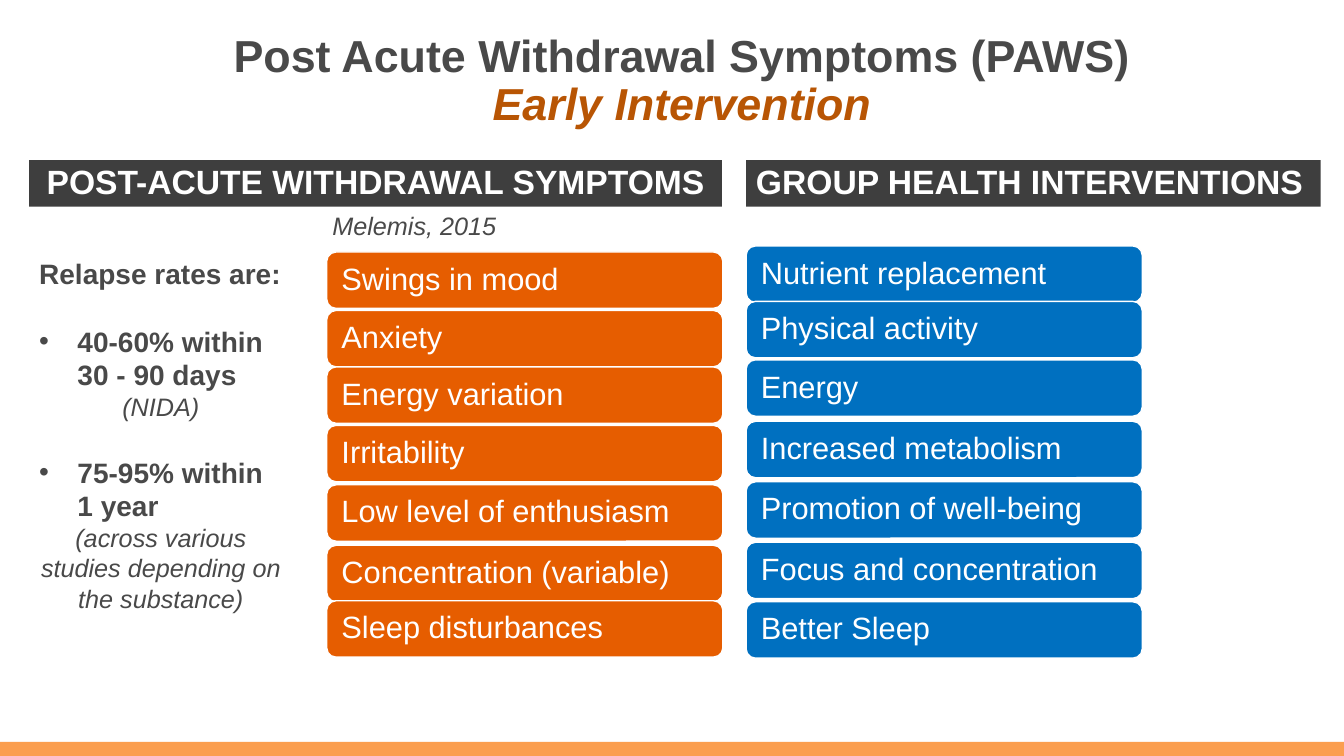
from dataclasses import dataclass

from lxml import etree
from pptx import Presentation
from pptx import util as u
from pptx.dml.color import RGBColor
from pptx.enum import shapes, text
from pptx.oxml.ns import qn


@dataclass(frozen=True)
class Theme:
    font: str = "Arial"
    ink: str = "494949"
    accent: str = "B85504"
    header: str = "3E3E3E"
    symptom: str = "E65D00"
    intervention: str = "0070C0"
    footer: str = "FB9E4F"
    white: str = "FFFFFF"
    title_size: int = 32
    header_size: int = 24
    pill_size: int = 22
    body_size: int = 20
    note_size: int = 18


class SlideBuilder:
    def __init__(self, slide, theme):
        self.slide = slide
        self.theme = theme

    def style(self, r, size, color, bold=False, italic=False):
        r.font.name = self.theme.font
        r.font.size = u.Pt(size)
        r.font.color.rgb = RGBColor.from_string(color)
        r.font.bold = bold
        r.font.italic = italic

    def title(self, heading, subtitle, *box):
        sp = self.slide.shapes.title
        sp.left, sp.top, sp.width, sp.height = map(u.Inches, box)
        tf = sp.text_frame
        tf.word_wrap = True
        tf.vertical_anchor = text.MSO_ANCHOR.MIDDLE
        p = tf.paragraphs[0]
        p.alignment = text.PP_ALIGN.CENTER
        p.line_spacing = 0.9
        for words, color, italic in ((heading, self.theme.ink, False),
                                     (subtitle, self.theme.accent, True)):
            r = p.add_run()
            r.text = words
            self.style(r, self.theme.title_size, color, True, italic)

    def block(self, kind, fill, *box):
        sp = self.slide.shapes.add_shape(kind, *map(u.Inches, box))
        sp.shadow.inherit = False
        sp.fill.solid()
        sp.fill.fore_color.rgb = RGBColor.from_string(fill)
        sp.line.fill.background()
        return sp

    def label(self, sp, words, size, align, bold=False):
        tf = sp.text_frame
        tf.word_wrap = True
        tf.vertical_anchor = text.MSO_ANCHOR.MIDDLE
        tf.text = words
        p = tf.paragraphs[0]
        p.alignment = align
        p.line_spacing = 0.9
        self.style(p.runs[0], size, self.theme.white, bold)

    def header(self, words, align, *box):
        sp = self.block(shapes.MSO_SHAPE.RECTANGLE, self.theme.header, *box)
        self.label(sp, words, self.theme.header_size, align, True)

    def pills(self, items, fill, left):
        for words, top in items:
            sp = self.block(shapes.MSO_SHAPE.ROUNDED_RECTANGLE, fill,
                            left, top, 3.93, 0.56)
            sp.line.color.rgb = RGBColor.from_string(self.theme.white)
            sp.line.width = u.Pt(1)
            sp.text_frame.margin_left = u.Inches(0.12)
            self.label(sp, words, self.theme.pill_size, text.PP_ALIGN.LEFT)

    def text_box(self, *box):
        tf = self.slide.shapes.add_textbox(*map(u.Inches, box)).text_frame
        tf.word_wrap = True
        return tf

    def bullet(self, p):
        pPr = p._p.get_or_add_pPr()
        pPr.set("marL", str(u.Inches(0.38)))
        pPr.set("indent", str(-u.Inches(0.38)))
        etree.SubElement(pPr, qn("a:buFont")).set("typeface", self.theme.font)
        etree.SubElement(pPr, qn("a:buChar")).set("char", "•")

    def rates(self, heading, entries, *box):
        tf = self.text_box(*box)
        tf.text = heading
        self.style(tf.paragraphs[0].runs[0], self.theme.body_size,
                   self.theme.ink, True)
        for rate, source in entries:
            p = tf.add_paragraph()
            p.text = rate
            p.space_before = u.Pt(24)
            self.bullet(p)
            self.style(p.runs[0], self.theme.body_size, self.theme.ink, True)
            p = tf.add_paragraph()
            p.text = source
            p.alignment = text.PP_ALIGN.CENTER
            self.style(p.runs[0], self.theme.note_size, self.theme.ink,
                       italic=True)

    def citation(self, words, *box):
        tf = self.text_box(*box)
        tf.text = words
        p = tf.paragraphs[0]
        p.alignment = text.PP_ALIGN.RIGHT
        self.style(p.runs[0], self.theme.note_size, self.theme.ink,
                   italic=True)


SYMPTOMS = [
    ("Swings in mood", 2.5),
    ("Anxiety", 3.08),
    ("Energy variation", 3.64),
    ("Irritability", 4.22),
    ("Low level of enthusiasm", 4.81),
    ("Concentration (variable)", 5.41),
    ("Sleep disturbances", 5.96),
]
INTERVENTIONS = [
    ("Nutrient replacement", 2.44),
    ("Physical activity", 2.99),
    ("Energy", 3.57),
    ("Increased metabolism", 4.18),
    ("Promotion of well-being", 4.78),
    ("Focus and concentration", 5.38),
    ("Better Sleep", 5.97),
]
RELAPSE_RATES = [
    ("40-60% within 30 - 90 days", "(NIDA)"),
    ("75-95% within 1 year",
     "(across various studies depending on the substance)"),
]


def main():
    prs = Presentation()
    prs.slide_width, prs.slide_height = u.Inches(13.33), u.Inches(7.5)
    theme = Theme()
    s = SlideBuilder(prs.slides.add_slide(prs.slide_layouts[5]), theme)

    # Footer band and title
    s.block(shapes.MSO_SHAPE.RECTANGLE, theme.footer, 0, 7.36, 13.33, 0.14)
    s.title("Post Acute Withdrawal Symptoms (PAWS) ", "Early Intervention",
            2.11, 0.28, 9.31, 1.07)

    # Symptoms column
    s.header("POST-ACUTE WITHDRAWAL SYMPTOMS", text.PP_ALIGN.CENTER,
             0.29, 1.59, 6.87, 0.46)
    s.citation("Melemis, 2015", 2.83, 2.04, 2.19, 0.4)
    s.pills(SYMPTOMS, theme.symptom, 3.24)

    # Interventions column
    s.header("GROUP HEALTH INTERVENTIONS", text.PP_ALIGN.LEFT,
             7.4, 1.59, 5.7, 0.46)
    s.pills(INTERVENTIONS, theme.intervention, 7.4)

    # Relapse rates
    s.rates("Relapse rates are:", RELAPSE_RATES, 0.29, 2.5, 2.61, 3.67)

    prs.save("out.pptx")


if __name__ == "__main__":
    main()
